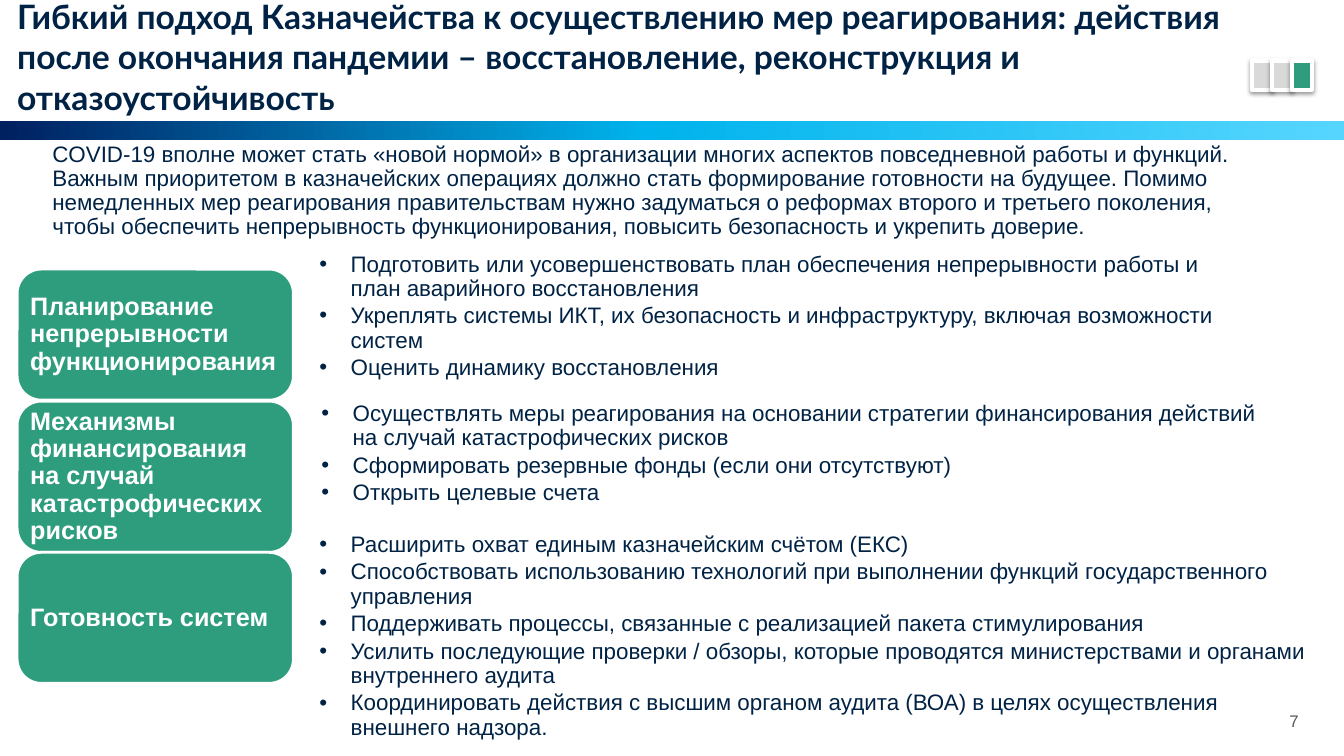
from copy import deepcopy

from lxml.etree import SubElement
from pptx import Presentation
from pptx.dml.color import RGBColor
from pptx.enum.shapes import MSO_SHAPE
from pptx.enum.text import MSO_ANCHOR, MSO_AUTO_SIZE, PP_ALIGN
from pptx.oxml.ns import qn
from pptx.util import Inches, Pt

COLORS = {
    "navy": "002345",
    "green": "2E9D7E",
    "white": "FFFFFF",
    "gray": "D9D9D9",
    "number": "595959",
    "shadow": "000000",
}
BAND_STOPS = [(0, "002060"), (0.48, "00B3EC"), (1, "56D6FF")]
TITLE = (
    "Гибкий подход Казначейства к осуществлению мер реагирования: действия после "
    "окончания пандемии – восстановление, реконструкция и отказоустойчивость"
)
INTRO = (
    "COVID-19 вполне может стать «новой нормой» в организации многих аспектов "
    "повседневной работы и функций. Важным приоритетом в казначейских операциях должно "
    "стать формирование готовности на будущее. Помимо немедленных мер реагирования "
    "правительствам нужно задуматься о реформах второго и третьего поколения, чтобы "
    "обеспечить непрерывность функционирования, повысить безопасность и укрепить доверие."
)
TOPICS = [
    (
        "Планирование непрерывности функционирования",
        (0.17, 2.67, 2.74, 1.3),
        (3.07, 2.46, 9.25, 1.7),
        [
            "Подготовить или усовершенствовать план обеспечения непрерывности работы и "
            "план аварийного восстановления",
            "Укреплять системы ИКТ, их безопасность и инфраструктуру, включая "
            "возможности систем",
            "Оценить динамику восстановления",
        ],
    ),
    (
        "Механизмы финансирования на случай катастрофических рисков",
        (0.17, 3.98, 2.74, 1.5),
        (3.09, 3.94, 9.66, 1.15),
        [
            "Осуществлять меры реагирования на основании стратегии финансирования "
            "действий на случай катастрофических рисков",
            "Сформировать резервные фонды (если они отсутствуют)",
            "Открыть целевые счета",
        ],
    ),
    (
        "Готовность систем",
        (0.17, 5.48, 2.74, 1.3),
        (3.07, 5.24, 10.15, 2.2),
        [
            "Расширить охват единым казначейским счётом (ЕКС)",
            "Способствовать использованию технологий при выполнении функций "
            "государственного управления",
            "Поддерживать процессы, связанные с реализацией пакета стимулирования",
            "Усилить последующие проверки / обзоры, которые проводятся министерствами "
            "и органами внутреннего аудита",
            "Координировать действия с высшим органом аудита (ВОА) в целях "
            "осуществления внешнего надзора.",
        ],
    ),
]


def rgb(name):
    """Return the palette colour with the given name."""
    return RGBColor.from_string(COLORS[name])


def write(frame, lines, size, color, bold=False, font="Arial", spacing=0.9, insets=(0, 0)):
    """Fill a text frame with left-aligned paragraphs of one style."""
    frame.word_wrap = True
    frame.auto_size = MSO_AUTO_SIZE.NONE
    frame.margin_left = frame.margin_right = Inches(insets[0])
    frame.margin_top = frame.margin_bottom = Inches(insets[1])
    frame.text = "\n".join(lines)
    for para in frame.paragraphs:
        para.alignment = PP_ALIGN.LEFT
        para.line_spacing = spacing
        for span in para.runs:
            span.font.name = font
            span.font.size = Pt(size)
            span.font.bold = bold
            span.font.color.rgb = rgb(color)


def add_block(slide, kind, box, fill, line_width):
    """Add a preset shape with a solid fill and a white outline."""
    shape = slide.shapes.add_shape(kind, *map(Inches, box))
    shape.shadow.inherit = False
    shape.fill.solid()
    shape.fill.fore_color.rgb = rgb(fill)
    shape.line.color.rgb = rgb("white")
    shape.line.width = Pt(line_width)
    return shape


def add_band(slide, box):
    """Draw the gradient band under the title."""
    band = slide.shapes.add_shape(MSO_SHAPE.RECTANGLE, *map(Inches, box))
    band.shadow.inherit = False
    band.line.fill.background()
    band.fill.gradient()
    band.fill.gradient_angle = 0
    stop_list = band._element.spPr.find(".//" + qn("a:gsLst"))
    stop_list.append(deepcopy(stop_list[0]))
    for stop, (position, color) in zip(band.fill.gradient_stops, BAND_STOPS):
        stop.position = position
        stop.color.rgb = RGBColor.from_string(color)


def add_title(slide, box):
    """Place and format the title placeholder."""
    title = slide.shapes.title
    title.left, title.top, title.width, title.height = map(Inches, box)
    write(title.text_frame, [TITLE], 24, "navy", bold=True, font="Lato", spacing=1.0)
    title.text_frame.vertical_anchor = MSO_ANCHOR.BOTTOM


def add_intro(slide, box):
    """Add the introductory paragraph."""
    intro = slide.shapes.add_textbox(*map(Inches, box))
    write(intro.text_frame, [INTRO], 16, "navy")


def add_topic_label(slide, box, label):
    """Add a green rounded label with a radius independent of its height."""
    block = add_block(slide, MSO_SHAPE.ROUNDED_RECTANGLE, box, "green", 2)
    block.adjustments[0] = 0.24 / box[3]
    write(block.text_frame, [label], 18, "white", bold=True, insets=(0.06, 0.03))
    block.text_frame.vertical_anchor = MSO_ANCHOR.MIDDLE


def add_bullets(slide, box, items):
    """Add the bulleted actions of one topic."""
    actions = slide.shapes.add_textbox(*map(Inches, box))
    write(actions.text_frame, items, 16, "navy", insets=(0.1, 0.05))
    for para in actions.text_frame.paragraphs:
        para.level = 1
        para.space_after = Pt(2.4)
        properties = para._p.get_or_add_pPr()
        properties.set("marL", str(Inches(0.31)))
        properties.set("indent", str(-Inches(0.31)))
        SubElement(properties, qn("a:buFont"), typeface="Arial")
        SubElement(properties, qn("a:buChar"), char="•")


def add_progress(slide, box):
    """Draw three progress markers, the last one highlighted."""
    left, top, width, height = box
    step = width / 3
    for index, color in enumerate(["gray", "gray", "green"]):
        marker = add_block(
            slide, MSO_SHAPE.RECTANGLE, (left + index * step, top, step, height), color, 3
        )
        effects = marker._element.spPr.find(qn("a:effectLst"))
        shadow = SubElement(
            effects,
            qn("a:outerShdw"),
            blurRad=str(Pt(3.1)),
            dist=str(Pt(1.6)),
            dir="5400000",
            rotWithShape="0",
        )
        tint = SubElement(shadow, qn("a:srgbClr"), val=COLORS["shadow"])
        SubElement(tint, qn("a:alpha"), val="38000")


def add_page_number(slide, box):
    """Add the right-aligned page number."""
    number = slide.shapes.add_textbox(*map(Inches, box))
    write(number.text_frame, ["7"], 12, "number", spacing=1.0)
    number.text_frame.vertical_anchor = MSO_ANCHOR.MIDDLE
    number.text_frame.paragraphs[0].alignment = PP_ALIGN.RIGHT


def main():
    """Build the deck and save it."""
    deck = Presentation()
    deck.slide_width, deck.slide_height = Inches(13.33), Inches(7.5)
    slide = deck.slides.add_slide(deck.slide_layouts[5])
    add_band(slide, (0, 1.2, 13.33, 0.19))
    add_title(slide, (0.17, 0, 12.69, 1.16))
    add_intro(slide, (0.52, 1.42, 11.9, 1.04))
    add_page_number(slide, (12.42, 6.95, 0.46, 0.4))
    for label, label_box, actions_box, items in TOPICS:
        add_topic_label(slide, label_box, label)
        add_bullets(slide, actions_box, items)
    add_progress(slide, (12.42, 0.6, 0.59, 0.29))
    deck.save("out.pptx")


if __name__ == "__main__":
    main()
